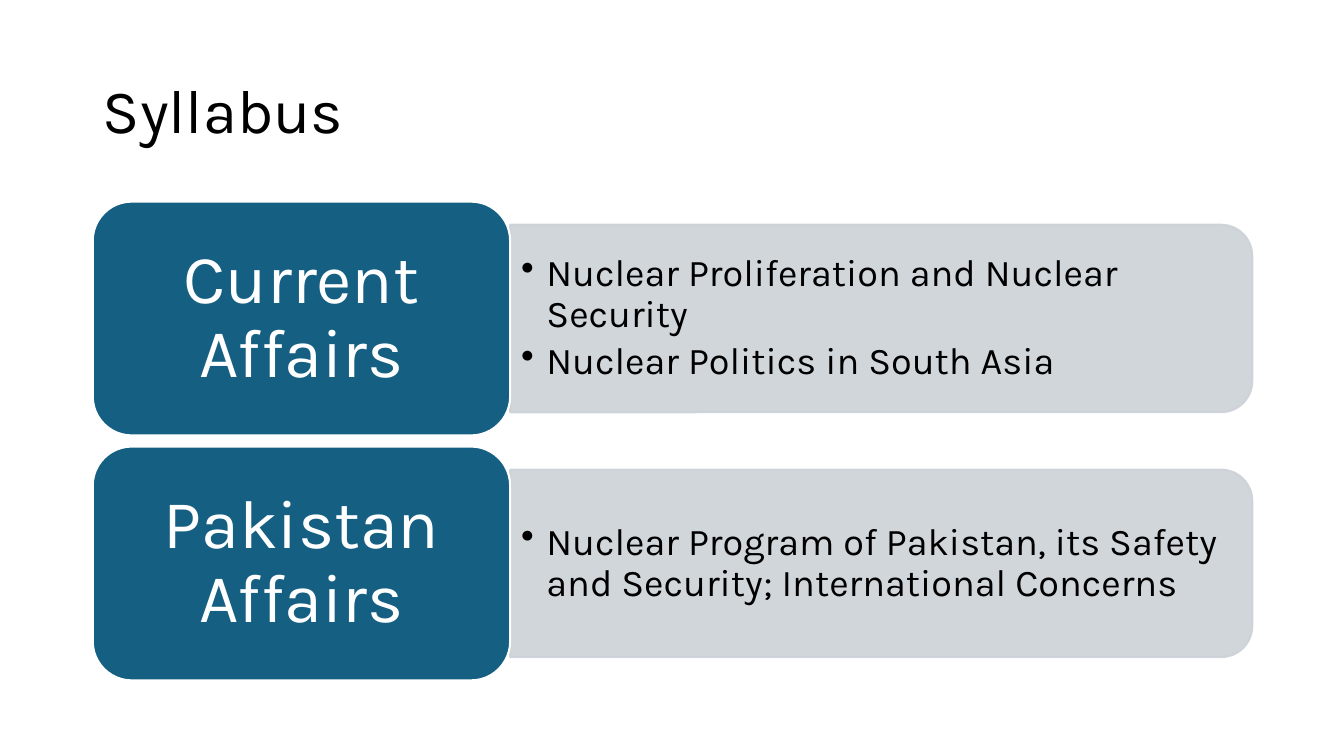
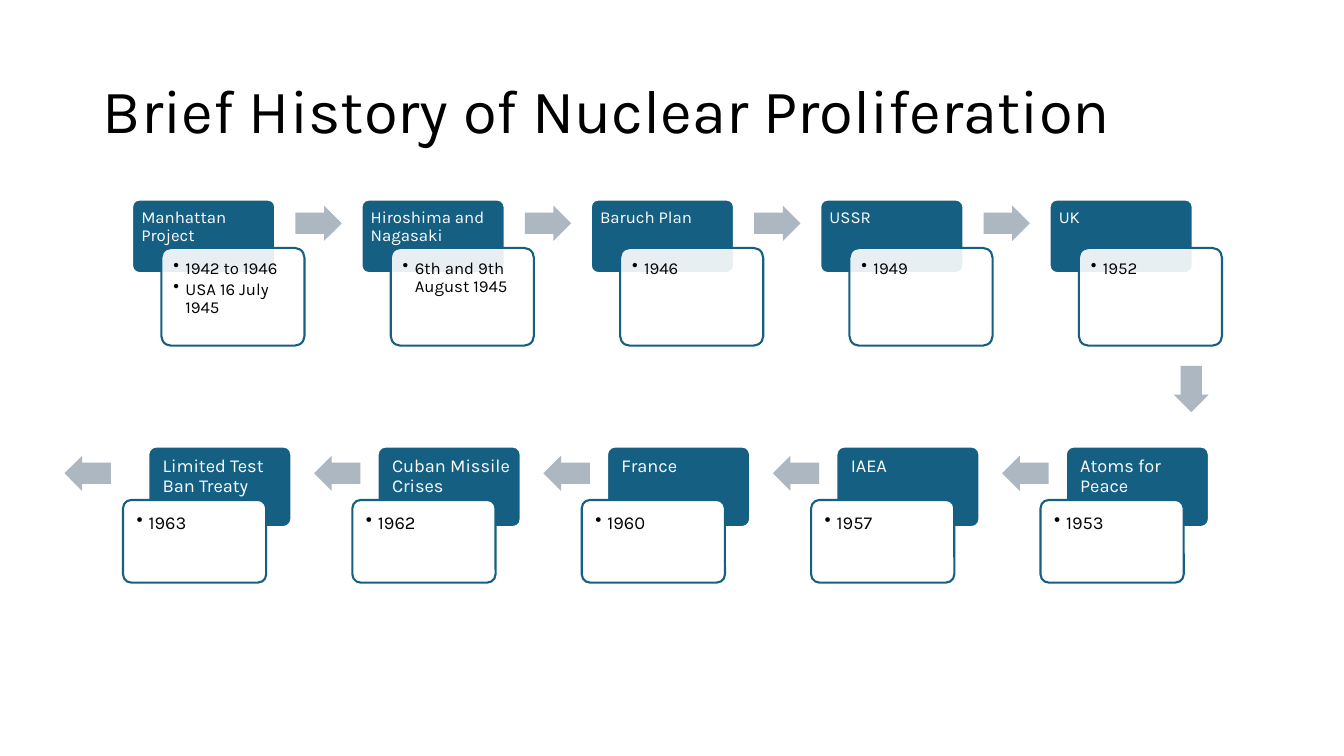
from lxml import etree
from pptx import Presentation
from pptx import util as u
from pptx.dml.color import RGBColor
from pptx.enum import shapes, text
from pptx.oxml.ns import qn

FONT = "Karla"
BLUE, PANEL, ARROW = "156082", "CCD2D8", "ACB7C1"
WHITE, BLACK = "FFFFFF", "000000"
TITLE_BOX = (0.92, 0.4, 11.5, 1.45)
SHAPE = shapes.MSO_SHAPE
ANCHOR, ALIGN = text.MSO_ANCHOR, text.PP_ALIGN

TOPICS = [
    ("Current Affairs", ["Nuclear Proliferation and Nuclear Security",
                         "Nuclear Politics in South Asia"]),
    ("Pakistan Affairs", ["Nuclear Program of Pakistan, its Safety and Security; "
                          "International Concerns"]),
]
EARLY_EVENTS = [
    ("Manhattan Project", ["1942 to 1946", "USA 16 July 1945"]),
    ("Hiroshima and Nagasaki", ["6th and 9th August 1945"]),
    ("Baruch Plan", ["1946"]),
    ("USSR", ["1949"]),
    ("UK", ["1952"]),
]
LATER_EVENTS = [
    ("Atoms for Peace", ["1953"]),
    ("IAEA", ["1957"]),
    ("France", ["1960"]),
    ("Cuban Missile Crises", ["1962"]),
    ("Limited Test Ban Treaty", ["1963"]),
]
EVENT_STEP = 2.275
CARD_WIDTH = 1.42


def inches(box):
    return [u.Inches(length) for length in box]


def paint(fill, color, opacity=100):
    fill.solid()
    fill.fore_color.rgb = RGBColor.from_string(color)
    if opacity < 100:
        for rgb in fill._xPr.iter(qn("a:srgbClr")):
            etree.SubElement(rgb, qn("a:alpha"), val=str(opacity * 1000))


def write(shape, lines, size, color=BLACK, align=ALIGN.LEFT, anchor=ANCHOR.TOP,
          insets=(0.1, 0.05, 0.1, 0.05), indent=0, after=0):
    """Fill a shape with paragraphs; an indent gives them bullets."""
    frame = shape.text_frame
    frame.word_wrap = True
    frame.auto_size = text.MSO_AUTO_SIZE.NONE
    frame.vertical_anchor = anchor
    (frame.margin_left, frame.margin_top,
     frame.margin_right, frame.margin_bottom) = inches(insets)
    for index, line in enumerate(lines):
        paragraph = frame.add_paragraph() if index else frame.paragraphs[0]
        paragraph.alignment = align
        paragraph.line_spacing = 0.9
        paragraph.space_after = u.Pt(after)
        if indent:
            props = paragraph._p.get_or_add_pPr()
            props.set("marL", str(u.Inches(indent)))
            props.set("indent", str(-u.Inches(indent)))
            etree.SubElement(props, qn("a:buChar"), char="•")
        run = paragraph.add_run()
        run.text = line
        run.font.name = FONT
        run.font.size = u.Pt(size)
        run.font.color.rgb = RGBColor.from_string(color)


def add_block(slide, kind, box, fill, line=None, opacity=100, line_opacity=100,
              adjust=()):
    block = slide.shapes.add_shape(kind, *inches(box))
    block.shadow.inherit = False
    paint(block.fill, fill, opacity)
    if line:
        block.line.width = u.Pt(1.5)
        paint(block.line.fill, line, line_opacity)
    else:
        block.line.fill.background()
    for index, value in enumerate(adjust):
        block.adjustments[index] = value
    return block


def add_titled_slide(deck, title):
    slide = deck.slides.add_slide(deck.slide_layouts[5])
    heading = slide.shapes.title
    heading.left, heading.top, heading.width, heading.height = inches(TITLE_BOX)
    write(heading, [title], 44, anchor=ANCHOR.MIDDLE)
    return slide


def add_topic(slide, left, top, name, points):
    label_width, label_height = 4.14, 2.32
    panel_width, panel_height = 7.36, 1.86
    panel_left = left + label_width
    middle = top + label_height / 2
    # The panel is a turned shape, so its box is given before the quarter turn.
    panel = add_block(slide, SHAPE.ROUND_2_SAME_RECTANGLE,
                      (panel_left + (panel_width - panel_height) / 2,
                       middle - panel_width / 2, panel_height, panel_width),
                      PANEL, PANEL, opacity=90, line_opacity=90)
    panel.rotation = 90
    details = slide.shapes.add_textbox(
        *inches((panel_left, middle - 0.84, 7.27, 1.68)))
    write(details, points, 27, anchor=ANCHOR.MIDDLE, indent=0.25, after=4.5,
          insets=(0.11, 0.06, 0.11, 0.06))
    label = add_block(slide, SHAPE.ROUNDED_RECTANGLE,
                      (left, top, label_width, label_height), BLUE, WHITE)
    write(label, [name], 49, WHITE, ALIGN.CENTER, ANCHOR.MIDDLE,
          insets=(0.2, 0.1, 0.2, 0.1))


def add_arrow(slide, kind, left, top, width=0.46, height=0.35):
    add_block(slide, kind, (left, top, width, height), ARROW, adjust=(0.6, 0.5))


def add_event(slide, left, top, name, dates, size, name_height, name_insets,
              date_shift, date_height, date_inset, date_opacity):
    """Place a name card with a date card overlapping it, shifted by date_shift."""
    across, down = date_shift
    name_card = add_block(slide, SHAPE.ROUNDED_RECTANGLE,
                          (left, top, CARD_WIDTH, name_height), BLUE, WHITE,
                          adjust=(0.1,))
    write(name_card, [name], size, WHITE, insets=name_insets)
    date_card = add_block(slide, SHAPE.ROUNDED_RECTANGLE,
                          (left + across, top + down, CARD_WIDTH, date_height),
                          WHITE, BLUE, opacity=date_opacity, adjust=(0.1,))
    write(date_card, dates, size, insets=(date_inset,) * 4, indent=0.12, after=2)


def add_early_row(slide, left, top):
    for index, (name, dates) in enumerate(EARLY_EVENTS):
        x = left + index * EVENT_STEP
        add_event(slide, x, top, name, dates, size=12, name_height=0.73,
                  name_insets=(0.07, 0.07, 0.07, 0.05), date_shift=(0.29, 0.48),
                  date_height=0.97, date_inset=0.09, date_opacity=90)
        if index < len(EARLY_EVENTS) - 1:
            add_arrow(slide, SHAPE.RIGHT_ARROW, x + 1.62, top + 0.06)


def add_later_row(slide, left, top):
    """Run from right to left, starting with the card at left."""
    for index, (name, dates) in enumerate(LATER_EVENTS):
        x = left - index * EVENT_STEP
        add_event(slide, x, top, name, dates, size=13, name_height=0.8,
                  name_insets=(0.12, 0.08, 0.05, 0.05), date_shift=(-0.25, 0.53),
                  date_height=0.82, date_inset=0.11, date_opacity=100)
        is_last = index == len(LATER_EVENTS) - 1
        add_arrow(slide, SHAPE.LEFT_ARROW, x - (0.83 if is_last else 0.63),
                  top + 0.09)


def build_syllabus(deck):
    slide = add_titled_slide(deck, "Syllabus")
    for index, (name, points) in enumerate(TOPICS):
        add_topic(slide, 0.92, 2 + index * 2.43, name, points)


def build_history(deck):
    slide = add_titled_slide(deck, "Brief History of Nuclear Proliferation")
    add_early_row(slide, 1.31, 1.98)
    add_arrow(slide, SHAPE.DOWN_ARROW, 11.64, 3.63, 0.35, 0.46)
    add_later_row(slide, 10.57, 4.43)


def main():
    deck = Presentation()
    deck.slide_width, deck.slide_height = inches((13.33, 7.5))
    build_syllabus(deck)
    build_history(deck)
    deck.save("out.pptx")


if __name__ == "__main__":
    main()
